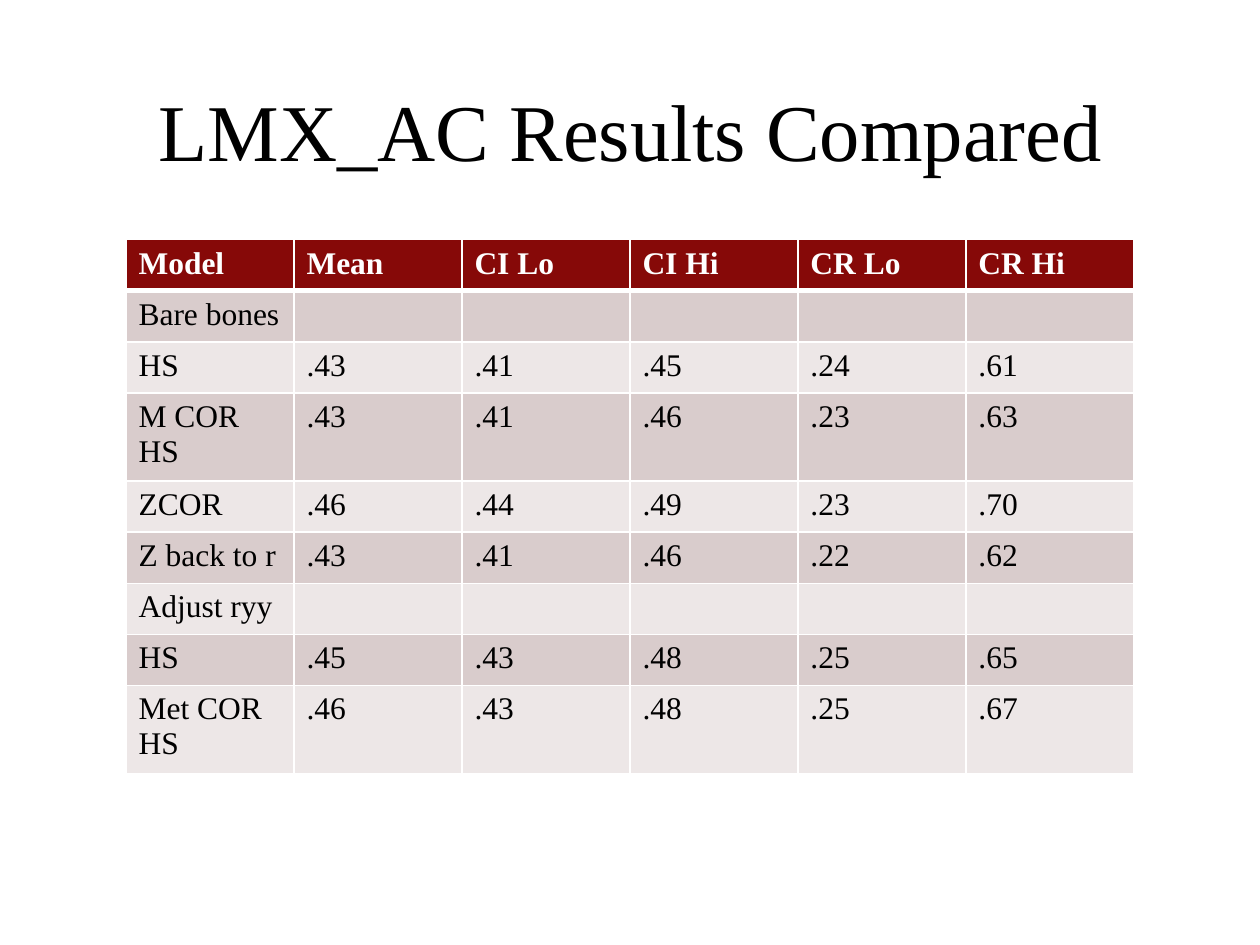
from dataclasses import dataclass

from lxml import etree
from pptx import Presentation
from pptx.dml.color import RGBColor
from pptx.enum.text import MSO_ANCHOR, PP_ALIGN
from pptx.oxml.ns import qn
from pptx.util import Cm, Pt

MIDDLE = MSO_ANCHOR.MIDDLE
CENTER = PP_ALIGN.CENTER
BLANK_LAYOUT = 6


@dataclass(frozen=True)
class Theme:
    font: str = "Times New Roman"
    title_size: float = 46
    table_size: float = 18
    text: str = "000000"
    header_text: str = "FFFFFF"
    header_fill: str = "860908"
    band_fills: tuple = ("D9CCCC", "EDE7E7")
    border: str = "FFFFFF"
    border_width: float = 1
    header_rule_width: float = 3


THEME = Theme()

RESULTS = [
    ("Model", "Mean", "CI Lo", "CI Hi", "CR Lo", "CR Hi"),
    ("Bare bones", "", "", "", "", ""),
    ("HS", ".43", ".41", ".45", ".24", ".61"),
    ("M COR HS", ".43", ".41", ".46", ".23", ".63"),
    ("ZCOR", ".46", ".44", ".49", ".23", ".70"),
    ("Z back to r", ".43", ".41", ".46", ".22", ".62"),
    ("Adjust ryy", "", "", "", "", ""),
    ("HS", ".45", ".43", ".48", ".25", ".65"),
    ("Met COR HS", ".46", ".43", ".48", ".25", ".67"),
]


def style_paragraph(paragraph, size, color, bold=False):
    font = paragraph.font
    font.name = THEME.font
    font.size = Pt(size)
    font.bold = bold
    font.color.rgb = RGBColor.from_string(color)


def add_title(slide, text):
    shape = slide.shapes.add_textbox(Cm(2.54), Cm(1.4), Cm(20.32), Cm(2.41))
    frame = shape.text_frame
    frame.word_wrap = True
    frame.vertical_anchor = MIDDLE
    paragraph = frame.paragraphs[0]
    paragraph.text = text
    paragraph.alignment = CENTER
    style_paragraph(paragraph, THEME.title_size, THEME.text)


def add_border(cell, side, width):
    properties = cell._tc.get_or_add_tcPr()
    line = etree.SubElement(properties, qn(f"a:{side}"), w=str(Pt(width)))
    fill = etree.SubElement(line, qn("a:solidFill"))
    etree.SubElement(fill, qn("a:srgbClr"), val=THEME.border)


def style_cell(cell, row_index):
    is_header = row_index == 0
    widths = dict.fromkeys(("lnL", "lnR", "lnT", "lnB"), THEME.border_width)
    # The heavy rule is the edge shared by the header and the first body row
    if is_header:
        widths["lnB"] = THEME.header_rule_width
    elif row_index == 1:
        widths["lnT"] = THEME.header_rule_width
    for side, width in widths.items():
        add_border(cell, side, width)

    fill = THEME.header_fill if is_header else THEME.band_fills[(row_index - 1) % 2]
    cell.fill.solid()
    cell.fill.fore_color.rgb = RGBColor.from_string(fill)
    color = THEME.header_text if is_header else THEME.text
    style_paragraph(cell.text_frame.paragraphs[0], THEME.table_size, color, is_header)


def add_results_table(slide, rows):
    row_height = Cm(1.03)
    shape = slide.shapes.add_table(
        len(rows), len(rows[0]), Cm(2.54), Cm(4.83), Cm(20.32), row_height * len(rows)
    )
    table = shape.table
    for row_index, values in enumerate(rows):
        table.rows[row_index].height = row_height
        for column_index, value in enumerate(values):
            cell = table.cell(row_index, column_index)
            cell.text = value
            style_cell(cell, row_index)


def main():
    presentation = Presentation()
    presentation.slide_width = Cm(25.4)
    presentation.slide_height = Cm(19.05)
    slide = presentation.slides.add_slide(presentation.slide_layouts[BLANK_LAYOUT])

    # Heading
    add_title(slide, "LMX_AC Results Compared")
    # Comparison of models
    add_results_table(slide, RESULTS)

    presentation.save("out.pptx")


if __name__ == "__main__":
    main()
